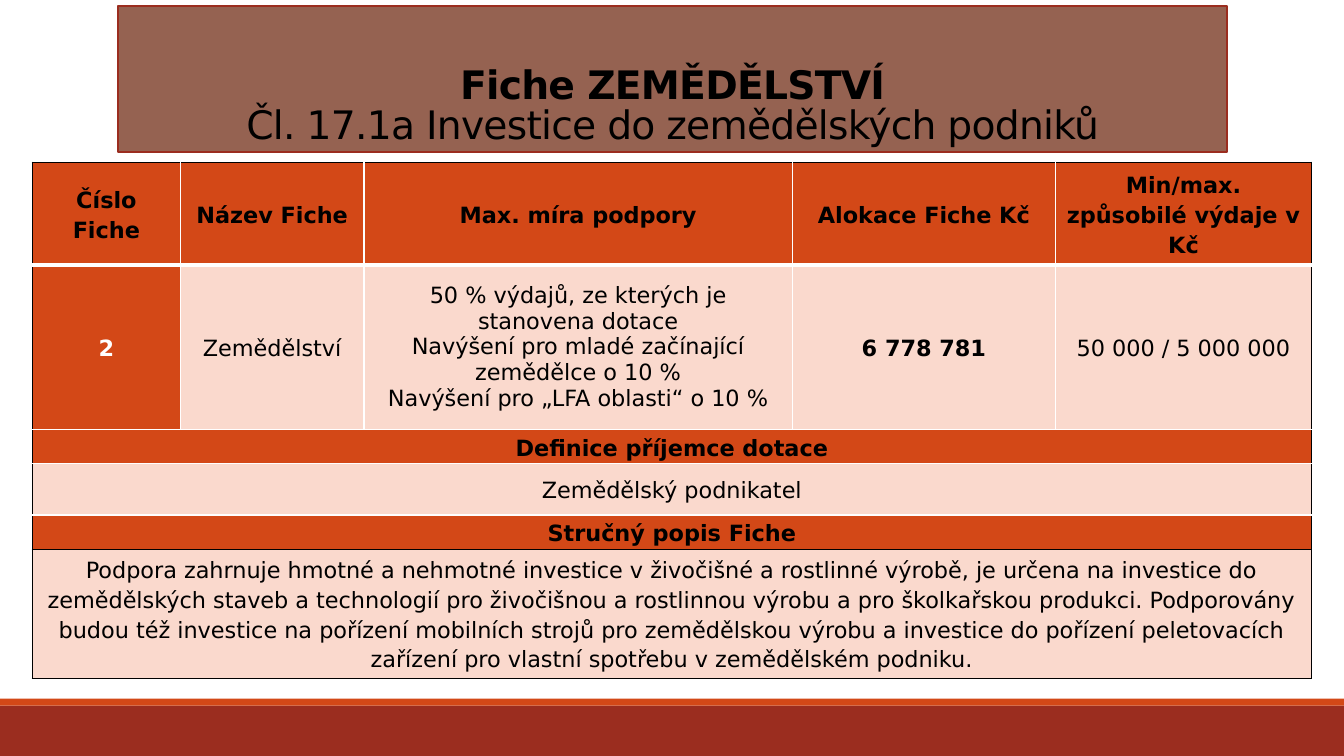
from lxml.etree import SubElement
from pptx import Presentation
from pptx.dml.color import RGBColor
from pptx.enum.shapes import MSO_SHAPE
from pptx.enum.text import MSO_ANCHOR, PP_ALIGN
from pptx.oxml.ns import qn
from pptx.util import Emu, Inches, Pt

BLACK, WHITE = "000000", "FFFFFF"
ORANGE, PEACH, DARK_RED, BROWN = "D34817", "FAD9CD", "9B2D1F", "956251"

COLUMNS = [11.03, 13.65, 31.88, 19.58, 19.05]
ROWS = [13.6, 21.73, 4.53, 6.8, 4.53, 17.07]
TEXTS = [
    ["Číslo Fiche", "Název Fiche", "Max. míra podpory", "Alokace Fiche Kč",
     "Min/max. způsobilé výdaje v Kč"],
    ["2", "Zemědělství",
     "50 % výdajů, ze kterých je stanovena dotace\n"
     "Navýšení pro mladé začínající zemědělce o 10 %\n"
     "Navýšení pro „LFA oblasti“ o 10 %",
     "6 778 781", "50 000 / 5 000 000"],
    ["Definice příjemce dotace"],
    ["Zemědělský podnikatel"],
    ["Stručný popis Fiche"],
    ["Podpora zahrnuje hmotné a nehmotné investice v živočišné a rostlinné výrobě, "
     "je určena na investice do zemědělských staveb a technologií pro živočišnou a "
     "rostlinnou výrobu a pro školkařskou produkci. Podporovány budou též investice "
     "na pořízení mobilních strojů pro zemědělskou výrobu a investice do pořízení "
     "peletovacích zařízení pro vlastní spotřebu v zemědělském podniku."],
]
HEADING_ROWS = (0, 2, 4)


def rgb(value):
    return RGBColor.from_string(value)


class FicheSlide:
    """Style and current slide; lengths are percentages of the slide's size."""

    font = "DejaVu Sans"

    def __init__(self, prs):
        self.width, self.height = prs.slide_width, prs.slide_height
        self.s = prs.slides.add_slide(prs.slide_layouts[6])

    def x(self, share):
        return Emu(round(self.width * share / 100))

    def y(self, share):
        return Emu(round(self.height * share / 100))

    def box(self, left, top, width, height, fill, line=None):
        sp = self.s.shapes.add_shape(MSO_SHAPE.RECTANGLE, self.x(left), self.y(top),
                                     self.x(width), self.y(height))
        sp.shadow.inherit = False
        sp.fill.solid()
        sp.fill.fore_color.rgb = rgb(fill)
        if line:
            sp.line.color.rgb = rgb(line)
            sp.line.width = Pt(1.25)
        else:
            sp.line.fill.background()
        return sp

    def style(self, p, size, spacing, color=BLACK):
        p.alignment = PP_ALIGN.CENTER
        p.line_spacing = spacing
        p.font.name, p.font.size = self.font, Pt(size)
        p.font.color.rgb = rgb(color)

    def title(self, sp, heading, subtitle):
        tf = sp.text_frame
        tf.word_wrap = True
        tf.vertical_anchor = MSO_ANCHOR.BOTTOM
        p = tf.paragraphs[0]
        self.style(p, 28, 0.85)
        for text, bold in ((heading, True), (subtitle, False)):
            if p.runs:
                p.add_line_break()
            r = p.add_run()
            r.text, r.font.bold = text, bold
            r.font._element.set("spc", "-50")

    def border(self, cell, side, color, width):
        ln = SubElement(cell._tc.get_or_add_tcPr(), qn(f"a:ln{side}"), w=str(Pt(width)))
        SubElement(SubElement(ln, qn("a:solidFill")), qn("a:srgbClr"), val=color)

    def cell(self, cell, text, fill, bold, color, borders):
        for side, (line, width) in borders.items():
            self.border(cell, side, line, width)
        cell.fill.solid()
        cell.fill.fore_color.rgb = rgb(fill)
        cell.vertical_anchor = MSO_ANCHOR.MIDDLE
        cell.margin_left = cell.margin_right = Inches(0.07)
        cell.margin_top = cell.margin_bottom = 0
        tf = cell.text_frame
        tf.text = text
        spacing = 1.0 if len(tf.paragraphs) > 1 else 1.15
        for p in tf.paragraphs:
            self.style(p, 16, spacing, color)
            p.font.bold = bold

    def table(self, left, top, columns, rows, texts):
        """Black outer frame, white inner lines; a one-text row spans all columns."""
        table = self.s.shapes.add_table(
            len(rows), len(columns), self.x(left), self.y(top),
            self.x(sum(columns)), self.y(sum(rows))).table
        table.first_row = table.horz_banding = False
        for column, share in zip(table.columns, columns):
            column.width = self.x(share)
        last_row, last_column = len(rows) - 1, len(columns) - 1
        for i, (share, row_texts) in enumerate(zip(rows, texts)):
            table.rows[i].height = self.y(share)
            merged = len(row_texts) == 1
            if merged:
                table.cell(i, 0).merge(table.cell(i, last_column))
            for j in range(len(columns)):
                number = (i, j) == (1, 0)
                heading = i in HEADING_ROWS or number
                borders = {
                    "L": (BLACK if merged or j == 0 else WHITE, 1),
                    "R": (BLACK if merged or j == last_column else WHITE, 1),
                    "T": (BLACK if i in (0, last_row) else WHITE, 1),
                    "B": (BLACK if i >= last_row - 1 else WHITE, 3 if i == 0 else 1),
                }
                self.cell(table.cell(i, j), row_texts[j] if j < len(row_texts) else "",
                          ORANGE if heading else PEACH, heading or (i, j) == (1, 3),
                          WHITE if number else BLACK, borders)


def main():
    prs = Presentation()
    prs.slide_width, prs.slide_height = Inches(13.33), Inches(7.5)
    slide = FicheSlide(prs)
    slide.box(0, 93.33, 100, 6.67, DARK_RED)
    slide.box(0, 92.4, 100, 0.93, ORANGE)
    banner = slide.box(8.78, 0.8, 82.52, 19.33, BROWN, DARK_RED)
    slide.title(banner, "Fiche ZEMĚDĚLSTVÍ", "Čl. 17.1a Investice do zemědělských podniků")
    slide.table(2.4, 21.47, COLUMNS, ROWS, TEXTS)
    prs.save("out.pptx")


if __name__ == "__main__":
    main()
